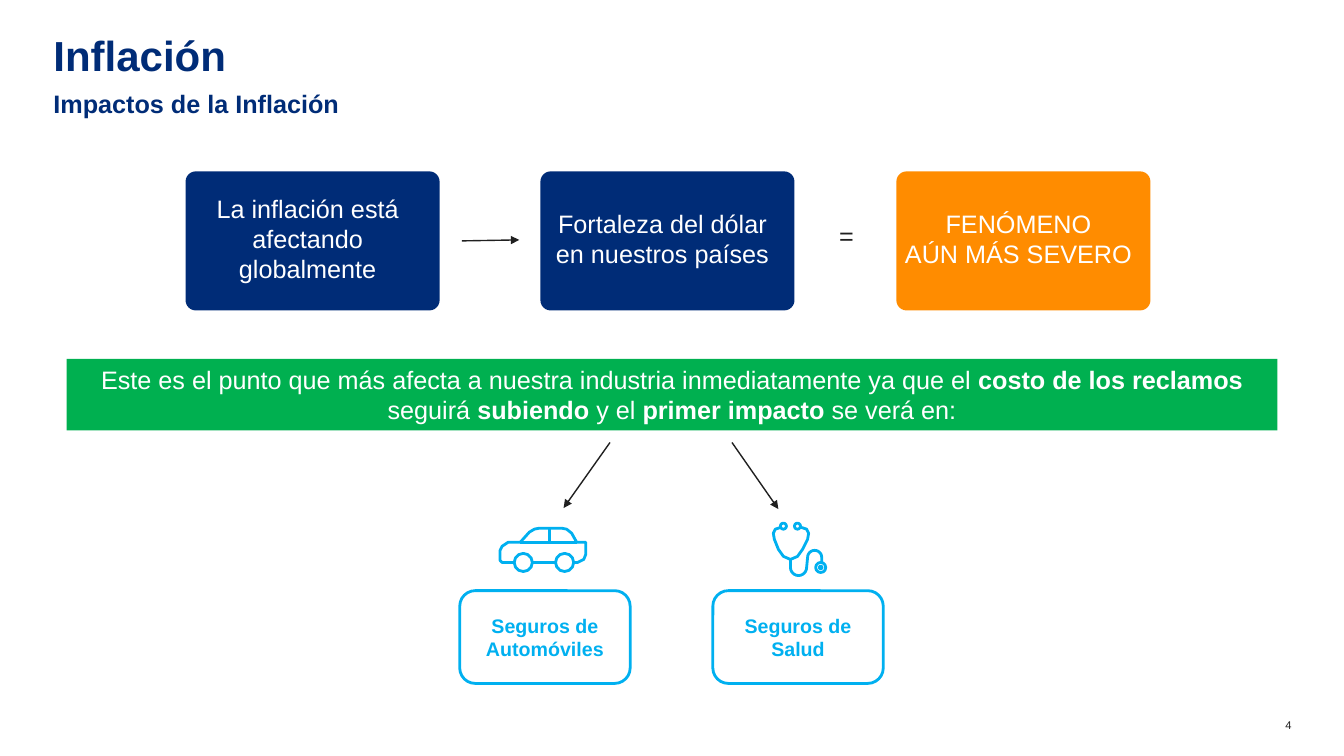
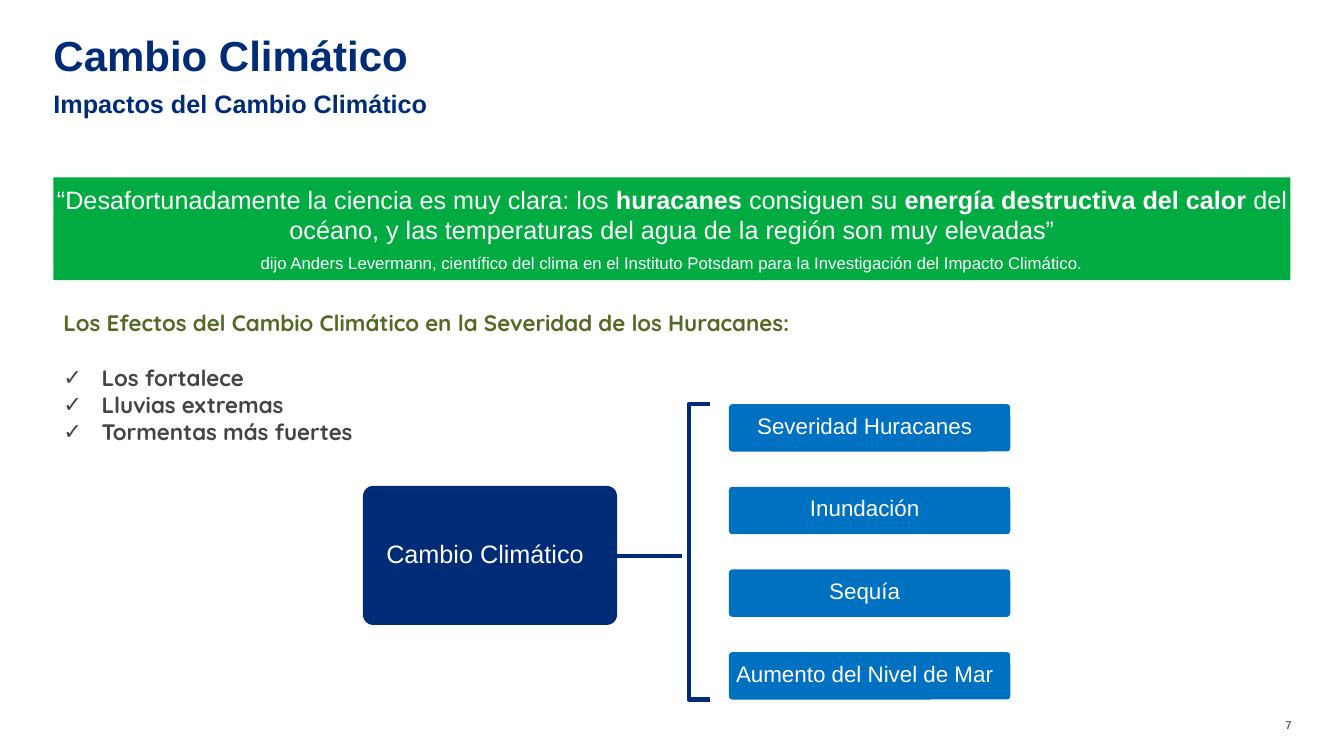
from math import cos, sin, pi

from lxml.etree import SubElement
from pptx import Presentation
from pptx.dml.color import RGBColor
from pptx.enum.shapes import MSO_CONNECTOR, MSO_SHAPE
from pptx.enum.text import MSO_ANCHOR, PP_ALIGN
from pptx.oxml.ns import qn
from pptx.util import Inches, Pt

NAVY = RGBColor(0x00, 0x2C, 0x77)
ORANGE = RGBColor(0xFF, 0x8C, 0x00)
GREEN = RGBColor(0x00, 0xB0, 0x50)
LEAF = RGBColor(0x00, 0xAC, 0x41)
SKY = RGBColor(0x00, 0xB0, 0xF0)
BLUE = RGBColor(0x00, 0x70, 0xC0)
OLIVE = RGBColor(0x57, 0x68, 0x25)
GREY = RGBColor(0x44, 0x44, 0x44)
INK = RGBColor(0x20, 0x20, 0x20)
WHITE = RGBColor(0xFF, 0xFF, 0xFF)

ROUND = MSO_SHAPE.ROUNDED_RECTANGLE
RECT = MSO_SHAPE.RECTANGLE
OVAL = MSO_SHAPE.OVAL
CENTER, LEFT, RIGHT = PP_ALIGN.CENTER, PP_ALIGN.LEFT, PP_ALIGN.RIGHT
TOP, MIDDLE = MSO_ANCHOR.TOP, MSO_ANCHOR.MIDDLE
FLUSH = (0, 0, 0, 0)
CARD = (0, 0, 0.1, 0.05)


def place(slide, kind, at, fill=None, line=None, width=2, adj=None):
    """Add a preset shape, or a text box when kind is None."""
    at = [Inches(v) for v in at]
    if kind is None:
        return slide.shapes.add_textbox(*at)
    shape = slide.shapes.add_shape(kind, *at)
    shape.shadow.inherit = False
    if adj is not None:
        shape.adjustments[0] = adj
    if fill is None:
        shape.fill.background()
    else:
        shape.fill.solid()
        shape.fill.fore_color.rgb = fill
    if line is None:
        shape.line.fill.background()
    else:
        shape.line.color.rgb = line
        shape.line.width = Pt(width)
    return shape


def write(shape, text, size, color=WHITE, bold=False, name="Arial",
          align=CENTER, anchor=MIDDLE, pad=FLUSH, wrap=True):
    """Fill a shape with one paragraph per line; *stars* mark bold words."""
    frame = shape.text_frame
    left, top, right, bottom = [Inches(v) for v in pad]
    frame_look = {"word_wrap": wrap, "vertical_anchor": anchor,
                  "margin_left": left, "margin_top": top,
                  "margin_right": right, "margin_bottom": bottom}
    for key, value in frame_look.items():
        setattr(frame, key, value)
    for row, line in enumerate(text.split("\n")):
        para = frame.paragraphs[0] if row == 0 else frame.add_paragraph()
        para.alignment = align
        for part, words in enumerate(line.split("*")):
            if not words:
                continue
            run = para.add_run()
            run.text = words
            font_look = {"size": Pt(size), "name": name, "bold": bold or part % 2 == 1}
            for key, value in font_look.items():
                setattr(run.font, key, value)
            run.font.color.rgb = color
    return frame.paragraphs


deck = Presentation()
deck.slide_width, deck.slide_height = Inches(13.33), Inches(7.5)

# Title, subtitle and page number
heads = [("Inflación", "Impactos de la Inflación", "4"),
         ("Cambio Climático", "Impactos del Cambio Climático", "7")]
slides = []
for head, sub, page in heads:
    slide = deck.slides.add_slide(deck.slide_layouts[5])
    slides.append(slide)
    title = slide.shapes.title
    spot = {"left": 0.53, "top": 0.39, "width": 12.27, "height": 0.54}
    for key, value in spot.items():
        setattr(title, key, Inches(value))
    write(title, head, 30, NAVY, True, align=LEFT, anchor=TOP)[0].line_spacing = 0.8
    write(place(slide, None, (0.53, 0.88, 12.28, 0.35)), sub, 18, NAVY, True,
          align=LEFT, anchor=TOP)
    write(place(slide, None, (12.5, 7.13, 0.31, 0.13)), page, 8, INK,
          align=RIGHT, anchor=TOP)
prices, climate = slides

# Inflation: cause, effect and result
cards = [(prices, 1.84, 1.7, NAVY, "La inflación está\nafectando\nglobalmente"),
         (prices, 5.36, 1.7, NAVY, "Fortaleza del dólar\nen nuestros países"),
         (prices, 8.89, 1.7, ORANGE, "FENÓMENO\nAÚN MÁS SEVERO"),
         (climate, 3.6, 4.82, NAVY, "Cambio Climático")]
for slide, x, y, fill, text in cards:
    card = place(slide, ROUND, (x, y, 2.52, 1.38), fill, adj=0.074)
    write(card, text, 18, pad=CARD, wrap=False)
write(place(prices, None, (8.15, 2.19, 0.49, 0.3)), "=", 18, INK, anchor=TOP)

band = place(prices, RECT, (0.66, 3.56, 12.01, 0.71), GREEN)
write(band, "Este es el punto que más afecta a nuestra industria inmediatamente ya que el "
      "*costo de los reclamos* seguirá *subiendo* y el *primer impacto* se verá en:",
      18, pad=(0.1, 0.05, 0.1, 0.05))

for x, text in [(4.56, "Seguros de\nAutomóviles"), (7.07, "Seguros de\nSalud")]:
    label = place(prices, ROUND, (x, 5.86, 1.69, 0.92), line=SKY)
    write(label, text, 14, SKY, True, pad=(0.08,) * 4)

# Climate: quote, effects and risks
quote = place(climate, RECT, (0.53, 1.76, 12.27, 1.02), LEAF)
for para, size in zip(write(
        quote, "“Desafortunadamente la ciencia es muy clara: los *huracanes* consiguen su "
        "*energía destructiva del calor* del océano, y las temperaturas del agua de la "
        "región son muy elevadas”\ndijo Anders Levermann, científico del clima en el "
        "Instituto Potsdam para la Investigación del Impacto Climático.", 18), (18, 12)):
    para.space_after = Pt(6)
    for run in para.runs:
        run.font.size = Pt(size)

effects = place(climate, None, (0.53, 3.02, 7.53, 1.45))
lead, *points = write(
    effects, "Los Efectos del Cambio Climático en la Severidad de los Huracanes:\n"
    "Los fortalece\nLluvias extremas\nTormentas más fuertes",
    16, GREY, True, "Quicksand", LEFT, TOP, (0.1, 0.05, 0.1, 0.05))
lead.runs[0].font.color.rgb = OLIVE
for para in points:
    props = para._p.get_or_add_pPr()
    props.set("marL", str(Inches(0.38)))
    props.set("indent", str(-Inches(0.38)))
    SubElement(props, qn("a:buFont"), typeface="Arial")
    SubElement(props, qn("a:buChar"), char="✓")
points[0].space_before = Pt(20)

risks = ["Severidad Huracanes", "Inundación", "Sequía", "Aumento del Nivel de Mar"]
for row, text in enumerate(risks):
    risk = place(climate, ROUND, (7.23, 4.01 + 0.82 * row, 2.79, 0.47), BLUE, adj=0.074)
    write(risk, text, 16, pad=CARD, wrap=False)

# Arrows and plain lines
lines = [(prices, (4.58, 2.39, 5.15, 2.38), INK, 1, True),
         (prices, (6.05, 4.39, 5.59, 5.04), INK, 1, True),
         (prices, (7.26, 4.39, 7.72, 5.05), INK, 1, True),
         (prices, (5.16, 5.38, 5.72, 5.38), SKY, 2, False),
         (prices, (5.45, 5.24, 5.45, 5.38), SKY, 2, False),
         (climate, (6.12, 5.52, 6.76, 5.52), NAVY, 3, False)]
for slide, ends, color, width, arrow in lines:
    link = slide.shapes.add_connector(MSO_CONNECTOR.STRAIGHT, *[Inches(v) for v in ends])
    link.line.color.rgb = color
    link.line.width = Pt(width)
    if arrow:
        SubElement(link.line._get_or_add_ln(), qn("a:tailEnd"), type="triangle")
    SubElement(link._element.spPr, qn("a:effectLst"))

# Outlines: car, stethoscope and bracket
car = [(5.09, 5.58), (4.98, 5.58), (4.96, 5.56), (4.96, 5.46), (4.98, 5.42), (5.04, 5.38),
       (5.16, 5.38), (5.25, 5.28), (5.3, 5.25), (5.35, 5.24), (5.57, 5.24), (5.62, 5.25),
       (5.67, 5.29), (5.72, 5.38), (5.81, 5.38), (5.81, 5.5), (5.79, 5.55), (5.73, 5.58)]
ears = [(7.75, 5.23), (7.69, 5.25), (7.67, 5.29), (7.68, 5.35), (7.72, 5.45), (7.77, 5.52),
        (7.84, 5.55), (7.91, 5.52), (7.96, 5.45), (8.01, 5.35), (8.02, 5.29), (8, 5.25),
        (7.94, 5.23)]
turns = [pi * step / 12 for step in range(13)]
tube = [(7.84, 5.55)]
tube += [(7.92 - 0.08 * cos(turn), 5.63 + 0.08 * sin(turn)) for turn in turns]
tube += [(8.08 - 0.07 * cos(turn), 5.53 - 0.07 * sin(turn)) for turn in turns]
tube += [(8.15, 5.58)]
bracket = [(7.04, 4.01), (6.83, 4.01), (6.83, 6.94), (7.04, 6.94)]
paths = [(prices, car, True, SKY, 2), (prices, ears, False, SKY, 2),
         (prices, tube, False, SKY, 2), (climate, bracket, False, NAVY, 3)]
for slide, path, close, color, width in paths:
    dots = [(Inches(x), Inches(y)) for x, y in path]
    pen = slide.shapes.build_freeform(*dots[0])
    pen.add_line_segments(dots[1:], close=close)
    shape = pen.convert_to_shape()
    shape.shadow.inherit = False
    shape.fill.background()
    shape.line.color.rgb = color
    shape.line.width = Pt(width)

# Wheels, earpieces and chest piece
rings = [(5.19, 5.58, 0.09, WHITE), (5.6, 5.58, 0.09, WHITE), (7.77, 5.22, 0.03, WHITE),
         (7.91, 5.22, 0.03, WHITE), (8.14, 5.63, 0.05, WHITE), (8.14, 5.63, 0.02, SKY)]
for x, y, r, fill in rings:
    place(prices, OVAL, (x - r, y - r, 2 * r, 2 * r), fill, SKY, 1 if r < 0.03 else 2)

deck.save("out.pptx")
